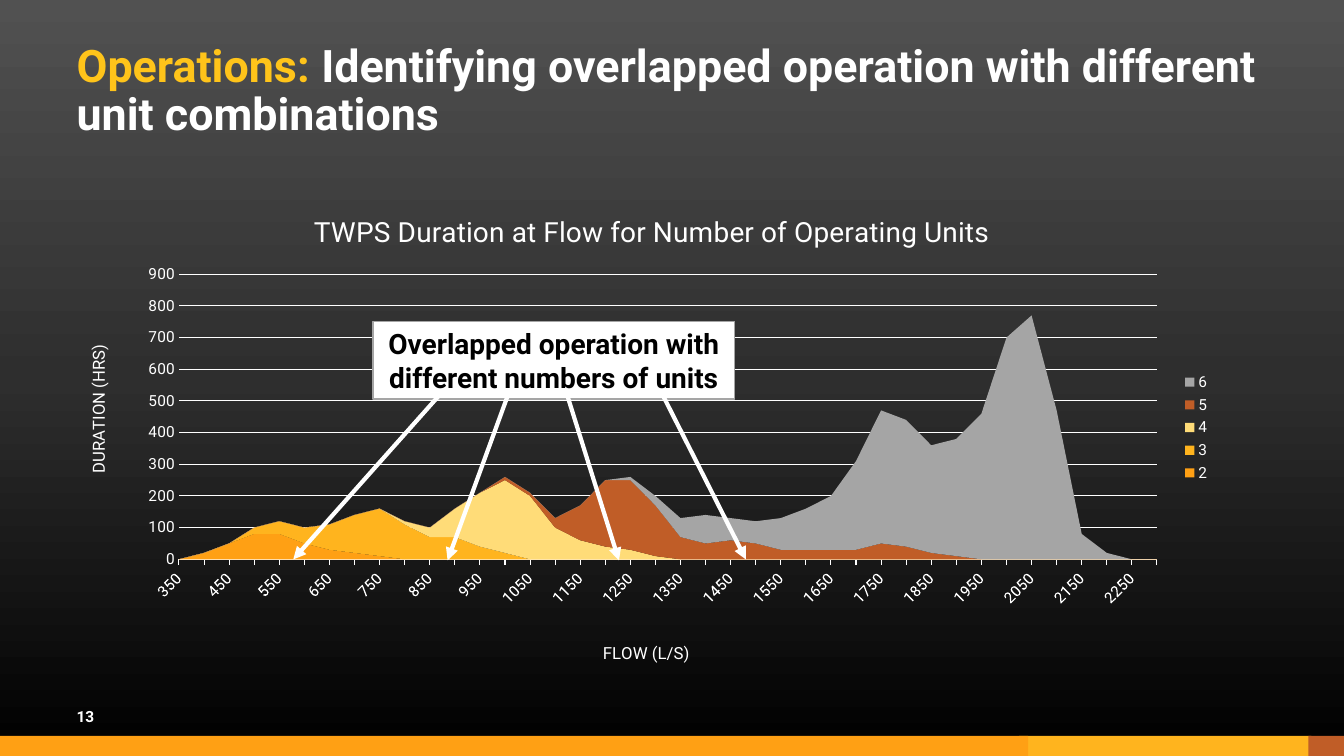
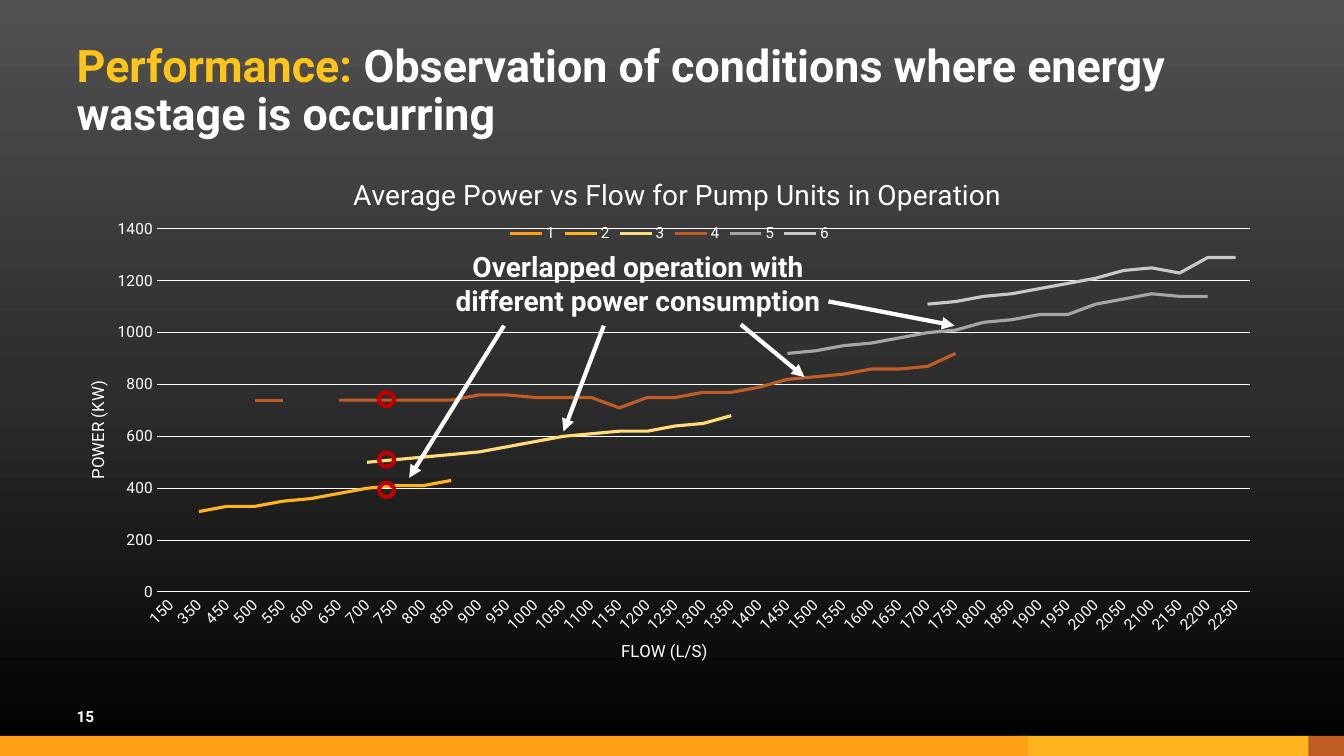
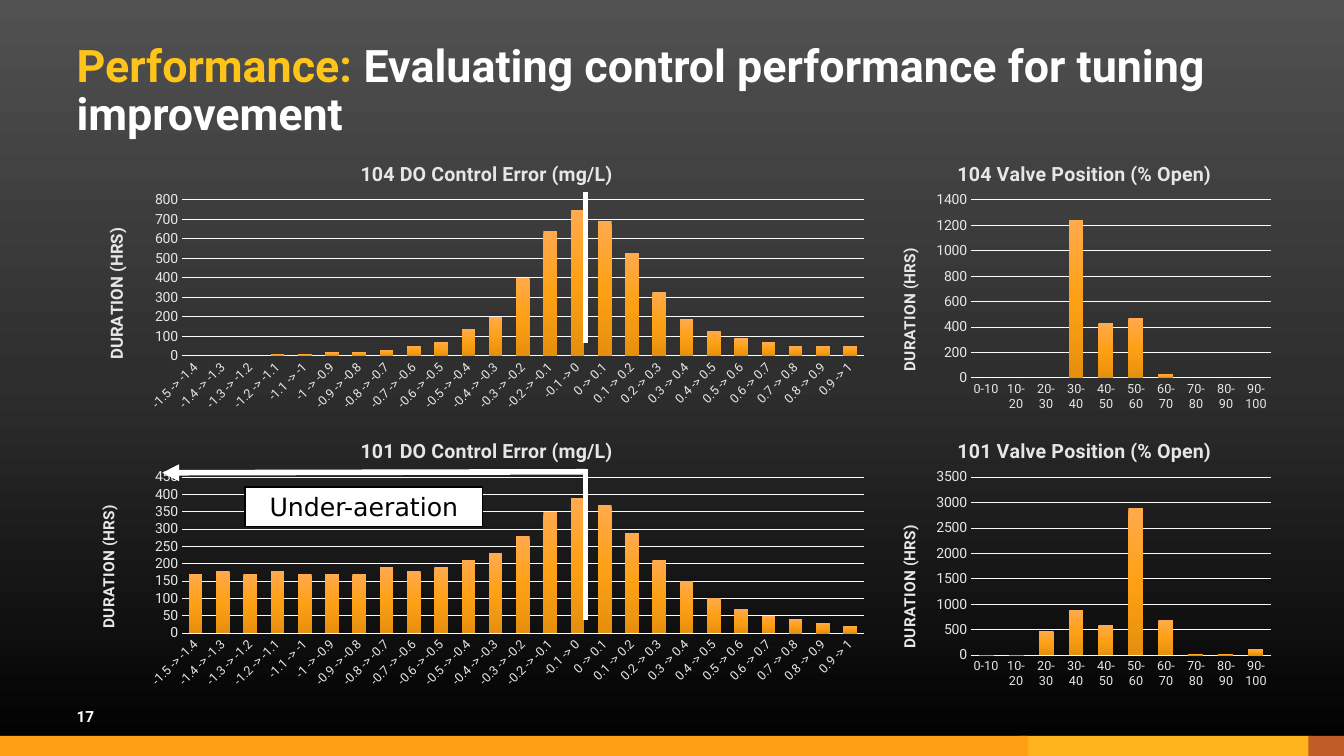
from dataclasses import dataclass, field
from typing import NamedTuple, Optional

from lxml import etree
from pptx import Presentation, util as u
from pptx.chart import data as chart_data
from pptx.dml import color
from pptx.enum import chart as charts, shapes, text
from pptx.oxml import ns


# Shared look
@dataclass(frozen=True)
class Theme:
    font: str = "Roboto"
    plain_font: str = "DejaVu Sans"
    white: str = "FFFFFF"
    black: str = "000000"
    gold: str = "FFC41A"
    orange: str = "FFA014"
    amber: str = "FFB41E"
    sand: str = "FFDC78"
    rust: str = "C05D27"
    gray: str = "A5A5A5"
    silver: str = "C8C8C8"
    pale: str = "E6E6E6"
    pale_line: str = "FBFBFB"
    red: str = "C00000"
    backdrop: tuple = ((0, "515151"), (50, "2E2E2E"), (100, "000000"))
    bars: tuple = ((0, "FFAA4E"), (50, "FFA014"), (100, "E58F0F"))
    title_size: float = 32
    callout_size: float = 20
    label_size: float = 18
    number_size: float = 11


THEME = Theme()


class Box(NamedTuple):
    left: float
    top: float
    width: float
    height: float

    def down(self, distance: float) -> "Box":
        return self._replace(top=self.top + distance)

    def lengths(self) -> list:
        return [u.Pt(value) for value in self]


class Span(NamedTuple):
    words: str
    size: float
    color: str
    bold: bool = True
    font: str = THEME.font


class Arrow(NamedTuple):
    x1: float
    y1: float
    x2: float
    y2: float


class Caption(NamedTuple):
    words: str
    size: float
    left: float
    top: float


class Series(NamedTuple):
    name: str
    color: str
    start: int
    values: list


@dataclass(frozen=True)
class ChartSpec:
    kind: charts.XL_CHART_TYPE
    box: Box
    plot: Box
    title: Caption
    value_title: Caption
    categories: list
    series: list
    top_value: float
    step: float
    category_title: Optional[Caption] = None
    text_color: str = THEME.white
    line_color: str = THEME.white
    category_size: float = 11
    value_size: float = 11
    bold: bool = False
    rotation: int = -45
    legend: Optional[charts.XL_LEGEND_POSITION] = None
    legend_at: Optional[tuple] = None
    label_skip: int = 1


@dataclass(frozen=True)
class PageSpec:
    number: int
    topic: str
    heading: str
    title_width: float
    charts: list = field(default_factory=list)


# Basic helpers
def rgb(value: str) -> color.RGBColor:
    return color.RGBColor.from_string(value)


def set_gradient(parent, stops: tuple) -> None:
    """Swap the solid fill of parent for a top-down gradient."""
    solid = parent.find(ns.qn("a:solidFill"))
    gradient = etree.Element(ns.qn("a:gradFill"), rotWithShape="1")
    stop_list = etree.SubElement(gradient, ns.qn("a:gsLst"))
    for position, value in stops:
        stop = etree.SubElement(stop_list, ns.qn("a:gs"), pos=str(position * 1000))
        etree.SubElement(stop, ns.qn("a:srgbClr"), val=value)
    etree.SubElement(gradient, ns.qn("a:lin"), ang="5400000", scaled="0")
    parent.replace(solid, gradient)


def style_font(font, size: float, value: str, bold: bool, name: str = THEME.font) -> None:
    font.size, font.bold, font.name = u.Pt(size), bold, name
    font.color.rgb = rgb(value)


def write(frame, spans: list, align=None, anchor=text.MSO_ANCHOR.TOP,
          inset: bool = True, spacing: Optional[float] = None) -> None:
    frame.word_wrap = True
    frame.vertical_anchor = anchor
    if not inset:
        frame.margin_left = frame.margin_right = frame.margin_top = frame.margin_bottom = 0
    para = frame.paragraphs[0]
    para.alignment = align
    para.line_spacing = spacing
    for span in spans:
        run = para.add_run()
        run.text = span.words
        style_font(run.font, span.size, span.color, span.bold, span.font)


def add_box(page, box: Box, fill: Optional[str], line: Optional[str] = None,
            width: float = 1, kind=shapes.MSO_SHAPE.RECTANGLE):
    shape = page.shapes.add_shape(kind, *box.lengths())
    shape.shadow.inherit = False
    if fill:
        shape.fill.solid()
        shape.fill.fore_color.rgb = rgb(fill)
    else:
        shape.fill.background()
    if line:
        shape.line.color.rgb = rgb(line)
        shape.line.width = u.Pt(width)
    else:
        shape.line.fill.background()
    return shape


def add_line(page, arrow: Arrow, width: float = 3, head: bool = True) -> None:
    line = page.shapes.add_connector(shapes.MSO_CONNECTOR.STRAIGHT,
                                     *[u.Pt(value) for value in arrow])
    line.line.color.rgb = rgb(THEME.white)
    line.line.width = u.Pt(width)
    properties = line.element.find(ns.qn("p:spPr"))
    if head:
        etree.SubElement(properties.find(ns.qn("a:ln")), ns.qn("a:tailEnd"), type="triangle")
    etree.SubElement(properties, ns.qn("a:effectLst"))


# Charts
def set_layout(parent, index: int, spec: ChartSpec, place: tuple, inner: bool = False) -> None:
    """Fix a chart part at page coordinates, given as left, top[, width, height]."""
    old = parent.find(ns.qn("c:layout"))
    if old is not None:
        parent.remove(old)
    layout = etree.Element(ns.qn("c:layout"))
    manual = etree.SubElement(layout, ns.qn("c:manualLayout"))
    box = spec.box
    shares = [(place[0] - box.left) / box.width, (place[1] - box.top) / box.height]
    if inner:
        etree.SubElement(manual, ns.qn("c:layoutTarget"), val="inner")
        shares += [place[2] / box.width, place[3] / box.height]
    for name in ("xMode", "yMode"):
        etree.SubElement(manual, ns.qn("c:" + name), val="edge")
    for name, share in zip("xywh", shares):
        etree.SubElement(manual, ns.qn("c:" + name), val=f"{share:.4f}")
    parent.insert(index, layout)


def write_caption(owner, element, spec: ChartSpec, caption: Caption, angle: int = 0) -> None:
    owner.has_title = True
    frame = (owner.chart_title if hasattr(owner, "chart_title") else owner.axis_title).text_frame
    run = frame.paragraphs[0].add_run()
    run.text = caption.words
    style_font(run.font, caption.size, spec.text_color, spec.bold)
    title = element.find(ns.qn("c:title"))
    body = title.find(".//" + ns.qn("a:bodyPr"))
    body.set("rot", str(angle * 60000))
    body.set("vert", "horz")
    set_layout(title, 1, spec, (caption.left, caption.top))


def set_crossing(value_xml, mode: str) -> None:
    """Say whether the value axis crosses between categories or on them."""
    crossing = value_xml.find(ns.qn("c:crossBetween"))
    if crossing is None:
        crossing = etree.Element(ns.qn("c:crossBetween"))
        value_xml.find(ns.qn("c:crosses")).addnext(crossing)
    crossing.set("val", mode)


def style_axes(chart, spec: ChartSpec) -> None:
    area = chart.element.find(".//" + ns.qn("c:plotArea"))
    is_area = spec.kind == charts.XL_CHART_TYPE.AREA_STACKED
    category, value = chart.category_axis, chart.value_axis
    category_xml, value_xml = area.find(ns.qn("c:catAx")), area.find(ns.qn("c:valAx"))
    for axis, size in ((category, spec.category_size), (value, spec.value_size)):
        axis.major_tick_mark = axis.minor_tick_mark = charts.XL_TICK_MARK.NONE
        style_font(axis.tick_labels.font, size, spec.text_color, False)

    category.has_major_gridlines = False
    if is_area:
        category.major_tick_mark = charts.XL_TICK_MARK.OUTSIDE
    category.format.line.color.rgb = rgb(spec.line_color)
    category.format.line.width = u.Pt(0.75)
    category_xml.find(ns.qn("c:txPr")).find(ns.qn("a:bodyPr")).set(
        "rot", str(spec.rotation * 60000))
    skip = etree.Element(ns.qn("c:tickLblSkip"), val=str(spec.label_skip))
    category_xml.find(ns.qn("c:noMultiLvlLbl")).addprevious(skip)
    if spec.category_title:
        write_caption(category, category_xml, spec, spec.category_title)

    value.minimum_scale, value.maximum_scale, value.major_unit = 0, spec.top_value, spec.step
    value.tick_labels.number_format = "0"
    value.tick_labels.number_format_is_linked = False
    value.format.line.fill.background()
    value.has_major_gridlines = True
    value.major_gridlines.format.line.color.rgb = rgb(spec.line_color)
    value.major_gridlines.format.line.width = u.Pt(0.75)
    set_crossing(value_xml, "midCat" if is_area else "between")
    write_caption(value, value_xml, spec, spec.value_title, -90)
    set_layout(area, 0, spec, spec.plot, inner=True)


def style_series(chart, spec: ChartSpec) -> None:
    plot = chart.plots[0]
    plot.vary_by_categories = False
    is_column = spec.kind == charts.XL_CHART_TYPE.COLUMN_CLUSTERED
    if is_column:
        plot.gap_width, plot.overlap = 100, -24
    for series, source in zip(plot.series, spec.series):
        if spec.kind == charts.XL_CHART_TYPE.LINE:
            series.smooth = False
            series.marker.style = charts.XL_MARKER_STYLE.NONE
            series.format.line.color.rgb = rgb(source.color)
            series.format.line.width = u.Pt(2.25)
        else:
            series.format.fill.solid()
            series.format.fill.fore_color.rgb = rgb(source.color)
    if is_column:
        for element in chart.element.iter(ns.qn("c:ser")):
            set_gradient(element.find(ns.qn("c:spPr")), THEME.bars)


def add_chart(page, spec: ChartSpec) -> None:
    data = chart_data.CategoryChartData()
    data.categories = spec.categories
    for series in spec.series:
        values = [None] * series.start + series.values
        data.add_series(series.name, values + [None] * (len(spec.categories) - len(values)))
    chart = page.shapes.add_chart(spec.kind, *spec.box.lengths(), data).chart
    style_font(chart.font, 10, THEME.white, False)
    write_caption(chart, chart.element.find(ns.qn("c:chart")), spec, spec.title)
    style_axes(chart, spec)
    style_series(chart, spec)
    chart.has_legend = spec.legend is not None
    if chart.has_legend:
        chart.legend.position = spec.legend
        chart.legend.include_in_layout = False
        style_font(chart.legend.font, 11, THEME.white, False)
        if spec.legend_at:
            legend = chart.element.find(".//" + ns.qn("c:legend"))
            set_layout(legend, 1, spec, spec.legend_at)


# Page frame: backdrop, bands, title, number and charts
BANDS = ((727.9, 208.8, THEME.amber), (934.6, 25.4, THEME.rust), (0, 734.4, THEME.orange))


def add_page(deck, spec: PageSpec):
    page = deck.slides.add_slide(deck.slide_layouts[6])
    page.background.fill.solid()
    set_gradient(page.element.find(".//" + ns.qn("p:bgPr")), THEME.backdrop)
    for left, width, fill in BANDS:
        add_box(page, Box(left, 525.6, width, 14.4), fill)
    for chart in spec.charts:
        add_chart(page, chart)
    title = page.shapes.add_textbox(*Box(54.7, 43.2, spec.title_width, 45.4).lengths())
    write(title.text_frame,
          [Span(spec.topic + ": ", THEME.title_size, THEME.gold),
           Span(spec.heading, THEME.title_size, THEME.white)],
          anchor=text.MSO_ANCHOR.MIDDLE, inset=False, spacing=0.9)
    number = page.shapes.add_textbox(*Box(54.7, 496.8, 57.6, 21.6).lengths())
    write(number.text_frame, [Span(str(spec.number), THEME.number_size, THEME.white)],
          anchor=text.MSO_ANCHOR.BOTTOM, inset=False)
    return page


# Operations page
def build_operations(deck) -> None:
    chart = ChartSpec(
        charts.XL_CHART_TYPE.AREA_STACKED,
        Box(54.7, 136.8, 817.2, 340.6), Box(127.8, 196.5, 698.6, 205.7),
        Caption("TWPS Duration at Flow for Number of Operating Units", 20, 220.7, 148.6),
        Caption("DURATION (HRS)", 12, 60, 245.7),
        [str(flow) for flow in range(350, 2301, 50)],
        [Series("2", THEME.orange, 0, [0, 20, 50, 80, 80, 50, 30, 20, 10, 0, None, 0]),
         Series("3", THEME.amber, 1, [0, 0, 20, 40, 50, 80, 120, 150, 110, 70, 70, 40, 20, 0, 0,
                                      None, None, 0, 0, 0]),
         Series("4", THEME.sand, 8, [0, 10, 30, 90, 170, 230, 200, 100, 60, 40, 30, 10, 0, 0, 0]),
         Series("5", THEME.rust, 12, [0, 10, 10, 30, 110, 210, 220, 160, 70, 50, 60, 50, 30, 30,
                                      30, 30, 50, 40, 20, 10, 0, 0, 0]),
         Series("6", THEME.gray, 15, [0, 0, 0, 10, 30, 60, 90, 70, 70, 100, 130, 170, 280, 420,
                                      400, 340, 370, 460, 700, 770, 470, 80, 20, 0, 0])],
        900, 100, Caption("FLOW (L/S)", 12, 428.5, 459.3),
        legend=charts.XL_LEGEND_POSITION.RIGHT, label_skip=2)
    page = add_page(deck, PageSpec(
        13, "Operations", "Identifying overlapped operation with different unit combinations",
        850.3, [chart]))
    callout = add_box(page, Box(266.4, 229.7, 258.5, 55.4), THEME.white, THEME.gray)
    write(callout.text_frame,
          [Span("Overlapped operation with different numbers of units",
                THEME.callout_size, THEME.black)], text.PP_ALIGN.CENTER)
    for arrow in (Arrow(313.2, 283, 209.5, 399.6), Arrow(363.6, 280.1, 319.7, 400.3),
                  Arrow(405.4, 283, 442.1, 400.3), Arrow(473.8, 283, 532.8, 399.6)):
        add_line(page, arrow)


# Energy page
def build_energy(deck) -> None:
    chart = ChartSpec(
        charts.XL_CHART_TYPE.LINE,
        Box(54.7, 104.4, 850.3, 376.6), Box(112.1, 163.6, 780.7, 259.3),
        Caption("Average Power vs Flow for Pump Units in Operation", 20, 248.6, 122.1),
        Caption("POWER (KW)", 12, 59.5, 270),
        ["150", "350"] + [str(flow) for flow in range(450, 2251, 50)],
        [Series("1", THEME.orange, 0, [160]),
         Series("2", THEME.amber, 1, [310, 330, 330, 350, 360, 380, 400, 410, 410, 430]),
         Series("3", THEME.sand, 7, [500, 510, 520, 530, 540, 560, 580, 600, 610, 620, 620, 640,
                                     650, 680]),
         Series("4", THEME.rust, 3, [740, 740, None, 740, 740, 740, 740, 740, 760, 760, 750, 750,
                                     750, 710, 750, 750, 770, 770, 790, 820, 830, 840, 860, 860,
                                     870, 920]),
         Series("5", THEME.gray, 22, [920, 930, 950, 960, 980, 1000, 1010, 1040, 1050, 1070,
                                      1070, 1110, 1130, 1150, 1140, 1140]),
         Series("6", THEME.silver, 27, [1110, 1120, 1140, 1150, 1170, 1190, 1210, 1240, 1250,
                                        1230, 1290, 1290])],
        1400, 200, Caption("FLOW (L/S)", 12, 441.4, 455),
        legend=charts.XL_LEGEND_POSITION.TOP, legend_at=(361, 157))
    page = add_page(deck, PageSpec(
        15, "Performance", "Observation of conditions where energy wastage is occurring",
        850.3, [chart]))
    callout = page.shapes.add_textbox(*Box(304.6, 175, 302.4, 55.4).lengths())
    write(callout.text_frame,
          [Span("Overlapped operation with different power consumption",
                THEME.callout_size, THEME.white)], text.PP_ALIGN.CENTER)
    for arrow in (Arrow(360, 232.6, 292.3, 341.3), Arrow(431.3, 232.6, 402.5, 308.2),
                  Arrow(529.2, 231.8, 574.6, 269.3), Arrow(591.8, 215.3, 681.8, 232.6)):
        add_line(page, arrow)
    for top in (344.9, 323.3, 280.1):
        add_box(page, Box(270.7, top, 10.8, 10.1), None, THEME.red, 3, shapes.MSO_SHAPE.OVAL)


# Control page: one row of two column charts per unit
ROW_STEP = 198


class ControlRow(NamedTuple):
    unit: str
    errors: list
    error_scale: tuple
    error_title: Caption
    valve: list
    valve_scale: tuple


CONTROL_ROWS = (
    ControlRow("104", [0, 0, 0, 10, 10, 20, 20, 30, 50, 70, 140, 200, 400, 640, 750, 690, 530,
                       330, 190, 130, 90, 70, 50, 50, 50], (800, 100),
               Caption("DURATION (HRS)", 12, 72.9, 160.7),
               [0, 0, 0, 1240, 430, 470, 30, 0, 0, 0], (1400, 200)),
    ControlRow("101", [170, 180, 170, 180, 170, 170, 170, 190, 180, 190, 210, 230, 280, 350, 390,
                       370, 290, 210, 150, 100, 70, 50, 40, 30, 20], (450, 50),
               Caption("DURATION (HRS)", 11, 67.9, 358.6),
               [0, 0, 480, 890, 590, 2900, 690, 20, 20, 120], (3500, 500)),
)


def column_chart(box: Box, plot: Box, title: Caption, value_title: Caption, categories: list,
                 values: list, scale: tuple, rotation: int) -> ChartSpec:
    return ChartSpec(
        charts.XL_CHART_TYPE.COLUMN_CLUSTERED, box, plot, title, value_title, categories,
        [Series("Series 1", THEME.orange, 0, values)], *scale,
        text_color=THEME.pale, line_color=THEME.pale_line, category_size=9, value_size=10,
        bold=True, rotation=rotation)


def build_control(deck) -> None:
    error_bins = [f"{low / 10:g} -> {(low + 1) / 10:g}" for low in range(-15, 10)]
    valve_bins = [f"{low}-{low + 10}" for low in range(0, 100, 10)]
    panels = []
    for index, row in enumerate(CONTROL_ROWS):
        drop = index * ROW_STEP
        panels.append(column_chart(
            Box(61.9, 100.1, 566.6, 198.7).down(drop), Box(130, 142.9, 487.1, 111.4).down(drop),
            Caption(f"{row.unit} DO Control Error (mg/L)", 14, 255, 112.1 + drop),
            row.error_title, error_bins, row.errors, row.error_scale, -45))
        panels.append(column_chart(
            Box(630.7, 100.1, 283.7, 198.7).down(drop), Box(693.6, 142.9, 214.3, 127.1).down(drop),
            Caption(f"{row.unit} Valve Position (% Open)", 14, 681.4, 112.1 + drop),
            Caption("DURATION (HRS)", 11, 640, 175 + drop),
            valve_bins, row.valve, row.valve_scale, 0))
    page = add_page(deck, PageSpec(
        17, "Performance", "Evaluating control performance for tuning improvement",
        890.6, panels))
    for index in range(len(CONTROL_ROWS)):
        drop = index * ROW_STEP
        add_line(page, Arrow(418.3, 244.8 + drop, 418.3, 136.8 + drop), 4, head=False)
    add_line(page, Arrow(418.3, 337, 115.9, 337.7), 4)
    label = add_box(page, Box(175, 347.8, 169.9, 28.1), THEME.white, THEME.black)
    write(label.text_frame,
          [Span("Under-aeration", THEME.label_size, THEME.black, False, THEME.plain_font)],
          text.PP_ALIGN.CENTER, text.MSO_ANCHOR.MIDDLE)


def main() -> None:
    deck = Presentation()
    deck.slide_width, deck.slide_height = u.Pt(960), u.Pt(540)
    build_operations(deck)
    build_energy(deck)
    build_control(deck)
    deck.save("out.pptx")


if __name__ == "__main__":
    main()
